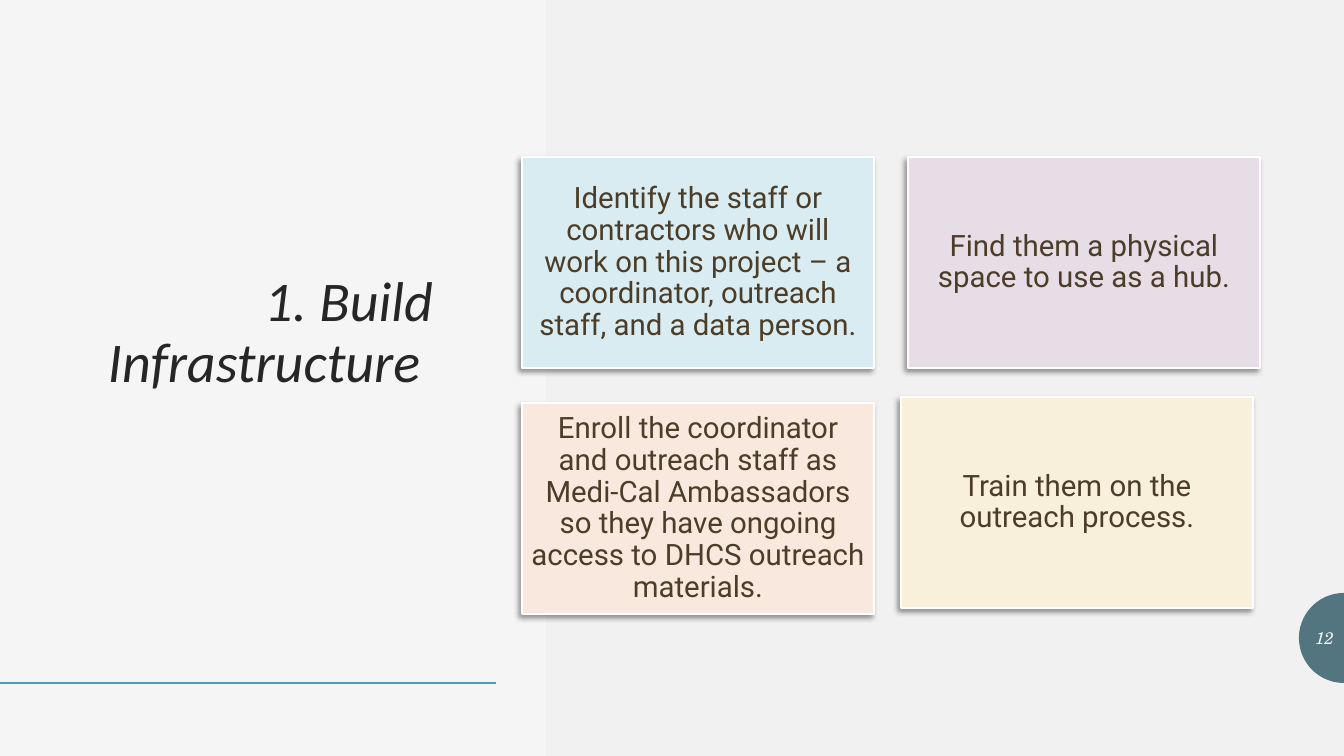
import math
from dataclasses import dataclass

import pptx
import pptx.dml.color
import pptx.enum.shapes
import pptx.enum.text
import pptx.oxml
import pptx.util
from lxml import etree

NS = "http://schemas.openxmlformats.org/drawingml/2006/main"
SCALE = 914400 / 100.8
SHAPE = pptx.enum.shapes.MSO_SHAPE
ALIGN = pptx.enum.text.PP_ALIGN


@dataclass(frozen=True)
class Theme:
    back: str = "F5F5F5"
    panel: str = "E9E7E9"
    badge: str = "224F5C"
    rule: str = "439EB7"
    edge: str = "FFFFFF"
    title: tuple = ("Calibri", 40, "262626", True)
    card: tuple = ("Roboto", 21, "4B3D28", False)
    number: tuple = ("TeX Gyre Schola", 12, "F5F5F5", True)


THEME = Theme()

CARDS = [
    ((522, 157), "D9ECF1", "Identify the staff or contractors who will work on this "
     "project – a coordinator, outreach staff, and a data person."),
    ((908, 157), "E7DDE7", "Find them a physical space to use as a hub."),
    ((522, 403), "F9E8DD", "Enroll the coordinator and outreach staff as Medi-Cal "
     "Ambassadors so they have ongoing access to DHCS outreach materials."),
    ((901, 397), "F8F0DB", "Train them on the outreach process."),
]
CARD_SIZE = (352, 211)


def px(n):
    return pptx.util.Emu(round(n * SCALE))


def rgb(code):
    return pptx.dml.color.RGBColor.from_string(code)


def paint(shape, code):
    shape.shadow.inherit = False
    shape.fill.solid()
    shape.fill.fore_color.rgb = rgb(code)


def write(shape, text, style, align, inset=10, space=0.9):
    frame = shape.text_frame
    face, size, code, slant = style
    side = px(inset)
    para = frame.paragraphs[0]
    para.text = text
    font = para.runs[0].font
    formats = [
        (frame, {"word_wrap": True, "margin_left": side, "margin_right": side,
                 "vertical_anchor": pptx.enum.text.MSO_ANCHOR.MIDDLE}),
        (para, {"alignment": align, "line_spacing": space}),
        (font, {"name": face, "size": pptx.util.Pt(size), "italic": slant}),
    ]
    for target, values in formats:
        for name, value in values.items():
            setattr(target, name, value)
    font.color.rgb = rgb(code)


def add_label(slide, box, *args, **more):
    write(slide.shapes.add_textbox(*map(px, box)), *args, **more)


def add_badge(slide, box):
    """Draw a half disc whose flat side is the right edge of the box."""
    left, top, width, height = box
    mid = top + height / 2
    points = []
    for step in range(1, 49):
        turn = math.pi * step / 48
        points.append((px(left + width - width * math.sin(turn)),
                       px(mid - height / 2 * math.cos(turn))))
    build = slide.shapes.build_freeform(px(left + width), px(top))
    build.add_line_segments(points)
    badge = build.convert_to_shape()
    paint(badge, THEME.badge)
    badge.line.fill.background()


def add_rule(slide, box):
    left, top, width, _ = box
    rule = slide.shapes.add_connector(
        pptx.enum.shapes.MSO_CONNECTOR.STRAIGHT,
        px(left), px(top), px(left + width), px(top))
    rule.line.color.rgb = rgb(THEME.rule)
    rule.line.width = pptx.util.Pt(2)
    etree.SubElement(rule._element.spPr, f"{{{NS}}}effectLst")


def add_panel(slide, box):
    panel = slide.shapes.add_shape(SHAPE.RECTANGLE, *map(px, box))
    paint(panel, THEME.panel)
    panel.line.fill.background()
    color = panel._element.spPr.find(f".//{{{NS}}}srgbClr")
    etree.SubElement(color, f"{{{NS}}}alpha", val="25000")


def add_card(slide, box, code, text):
    card = slide.shapes.add_shape(SHAPE.RECTANGLE, *map(px, box))
    paint(card, code)
    card.line.color.rgb = rgb(THEME.edge)
    card.line.width = pptx.util.Pt(1)
    effects = card._element.spPr.find(f"{{{NS}}}effectLst")
    effects.append(pptx.oxml.parse_xml(
        f'<a:outerShdw xmlns:a="{NS}" blurRad="50800" dist="38100" dir="8100000" '
        'algn="tr" rotWithShape="0"><a:srgbClr val="000000">'
        '<a:alpha val="40000"/></a:srgbClr></a:outerShdw>'))
    write(card, text, THEME.card, ALIGN.CENTER, inset=9)


def main():
    deck = pptx.Presentation()
    deck.slide_width, deck.slide_height = px(1344), px(756)
    slide = deck.slides.add_slide(deck.slide_layouts[6])
    slide.background.fill.solid()
    slide.background.fill.fore_color.rgb = rgb(THEME.back)

    add_badge(slide, (1299, 593, 45, 90))
    add_rule(slide, (0, 683, 496, 0))
    add_panel(slide, (546, 0, 798, 756))
    add_label(slide, (24, 61, 419, 546), "1. Build Infrastructure ",
              THEME.title, ALIGN.RIGHT)
    for spot, code, text in CARDS:
        add_card(slide, spot + CARD_SIZE, code, text)
    add_label(slide, (1299, 618, 45, 40), "12", THEME.number, ALIGN.RIGHT, space=1.0)
    deck.save("out.pptx")


if __name__ == "__main__":
    main()
